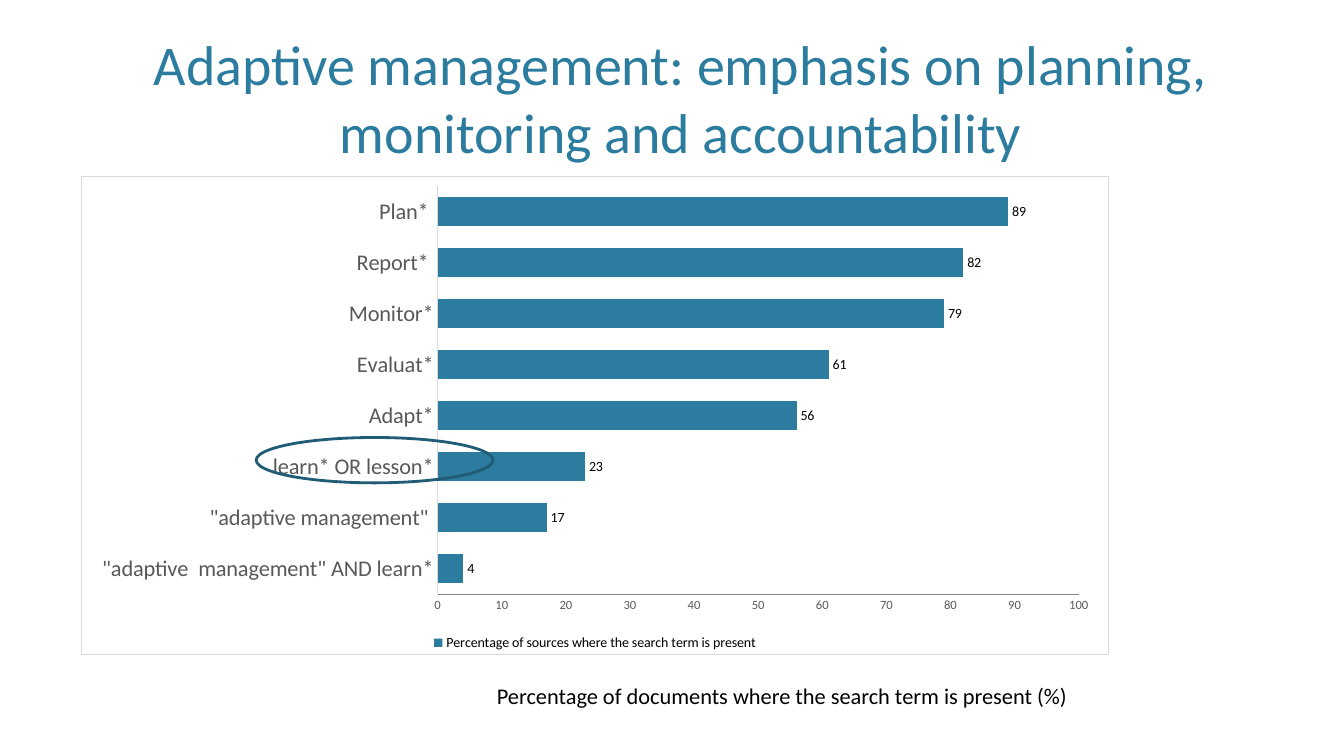
from dataclasses import dataclass

from lxml.etree import SubElement
from pptx import Presentation
from pptx.chart.data import CategoryChartData
from pptx.dml.color import RGBColor
from pptx.enum.chart import XL_CHART_TYPE, XL_LABEL_POSITION, XL_LEGEND_POSITION, XL_TICK_MARK
from pptx.enum.shapes import MSO_SHAPE
from pptx.enum.text import MSO_ANCHOR, MSO_AUTO_SIZE, PP_ALIGN
from pptx.oxml import parse_xml
from pptx.oxml.ns import nsdecls, qn
from pptx.util import Inches, Pt

FONT = "Calibri"
TEAL, DARK_TEAL = "2C7C9F", "215C76"
GREY, PALE_GREY, BLACK = "595959", "D9D9D9", "000000"


@dataclass(frozen=True)
class Box:
    left: float
    top: float
    width: float
    height: float

    def lengths(self) -> tuple:
        return tuple(Inches(v) for v in (self.left, self.top, self.width, self.height))


@dataclass(frozen=True)
class SearchTerm:
    label: str
    percentage: int


# Listed from the bottom bar to the top one
TERMS = [
    SearchTerm('"adaptive  management" AND learn*', 4),
    SearchTerm('"adaptive management" ', 17),
    SearchTerm("learn* OR lesson*", 23),
    SearchTerm("Adapt*", 56),
    SearchTerm("Evaluat*", 61),
    SearchTerm("Monitor*", 79),
    SearchTerm("Report* ", 82),
    SearchTerm("Plan* ", 89),
]
PLOT_AREA = {"x": 0.347, "y": 0.02, "w": 0.624, "h": 0.854}


def rgb(colour: str) -> RGBColor:
    return RGBColor.from_string(colour)


def set_font(font, size: float, colour: str = BLACK) -> None:
    font.name, font.size = FONT, Pt(size)
    font.color.rgb = rgb(colour)


def write(frame, text: str, *, size: float, colour: str = BLACK,
          align=PP_ALIGN.LEFT, anchor=MSO_ANCHOR.TOP, auto_size=MSO_AUTO_SIZE.NONE) -> None:
    frame.word_wrap, frame.auto_size = True, auto_size
    frame.vertical_anchor = anchor
    paragraph = frame.paragraphs[0]
    paragraph.alignment = align
    run = paragraph.add_run()
    run.text = text
    set_font(run.font, size, colour)


def frame_chart(chart) -> None:
    """Give the chart a thin border and fix the inner plot area."""
    border = parse_xml(
        f'<c:spPr {nsdecls("c", "a")}><a:noFill/><a:ln w="{Pt(0.75)}"><a:solidFill>'
        f'<a:srgbClr val="{PALE_GREY}"/></a:solidFill></a:ln></c:spPr>')
    chart_node = chart.element.find(qn("c:chart"))
    chart_node.addnext(border)

    plot_area = chart_node.find(qn("c:plotArea"))
    for layout in plot_area.findall(qn("c:layout")):
        plot_area.remove(layout)
    layout = parse_xml(f'<c:layout {nsdecls("c")}><c:manualLayout/></c:layout>')
    manual = layout[0]
    SubElement(manual, qn("c:layoutTarget")).set("val", "inner")
    for side in "xy":
        SubElement(manual, qn(f"c:{side}Mode")).set("val", "edge")
    for key, share in PLOT_AREA.items():
        SubElement(manual, qn(f"c:{key}")).set("val", str(share))
    plot_area.insert(0, layout)


def add_term_chart(slide, box: Box) -> None:
    data = CategoryChartData()
    data.categories = [term.label for term in TERMS]
    data.add_series("Percentage of sources where the search term is present",
                    [term.percentage for term in TERMS])
    chart = slide.shapes.add_chart(XL_CHART_TYPE.BAR_CLUSTERED, *box.lengths(), data).chart
    chart.has_title = False
    set_font(chart.font, 10)

    # Bars and their values
    plot = chart.plots[0]
    plot.gap_width, plot.vary_by_categories = 75, False
    bars = plot.series[0].format.fill
    bars.solid()
    bars.fore_color.rgb = rgb(TEAL)
    plot.has_data_labels = True
    values = plot.data_labels
    values.show_value, values.position = True, XL_LABEL_POSITION.OUTSIDE_END
    set_font(values.font, 10)

    # Axes
    terms_axis, percent_axis = chart.category_axis, chart.value_axis
    for axis, size in ((terms_axis, 16), (percent_axis, 9)):
        axis.major_tick_mark = axis.minor_tick_mark = XL_TICK_MARK.NONE
        axis.has_major_gridlines = False
        set_font(axis.tick_labels.font, size, GREY)
    terms_axis.format.line.color.rgb = rgb(PALE_GREY)
    terms_axis.format.line.width = Pt(0.75)
    percent_axis.minimum_scale, percent_axis.maximum_scale = 0, 100
    percent_axis.major_unit = 10

    # Legend
    chart.has_legend = True
    chart.legend.position = XL_LEGEND_POSITION.BOTTOM
    chart.legend.include_in_layout = False
    set_font(chart.legend.font, 10)
    frame_chart(chart)


def add_highlight(slide, box: Box) -> None:
    ring = slide.shapes.add_shape(MSO_SHAPE.OVAL, *box.lengths())
    ring.shadow.inherit = False
    ring.fill.background()
    ring.line.color.rgb = rgb(DARK_TEAL)
    ring.line.width = Pt(2)


def main() -> None:
    deck = Presentation()
    deck.slide_width, deck.slide_height = Inches(13.33), Inches(7.5)
    slide = deck.slides.add_slide(deck.slide_layouts[5])

    # Title
    title = slide.shapes.title
    title.left, title.top, title.width, title.height = Box(0.32, 0.12, 12.86, 1.56).lengths()
    write(title.text_frame,
          "Adaptive management: emphasis on planning, monitoring and accountability",
          size=40, colour=TEAL, align=PP_ALIGN.CENTER, anchor=MSO_ANCHOR.BOTTOM)

    # Chart with the learning term ringed
    add_term_chart(slide, Box(0.8, 1.75, 10.2, 4.75))
    add_highlight(slide, Box(2.54, 4.34, 2.35, 0.45))

    # Caption
    caption = slide.shapes.add_textbox(*Box(4.83, 6.72, 7.41, 0.37).lengths())
    write(caption.text_frame, "Percentage of documents where the search term is present (%)",
          size=16, auto_size=MSO_AUTO_SIZE.SHAPE_TO_FIT_TEXT)

    deck.save("out.pptx")


if __name__ == "__main__":
    main()
